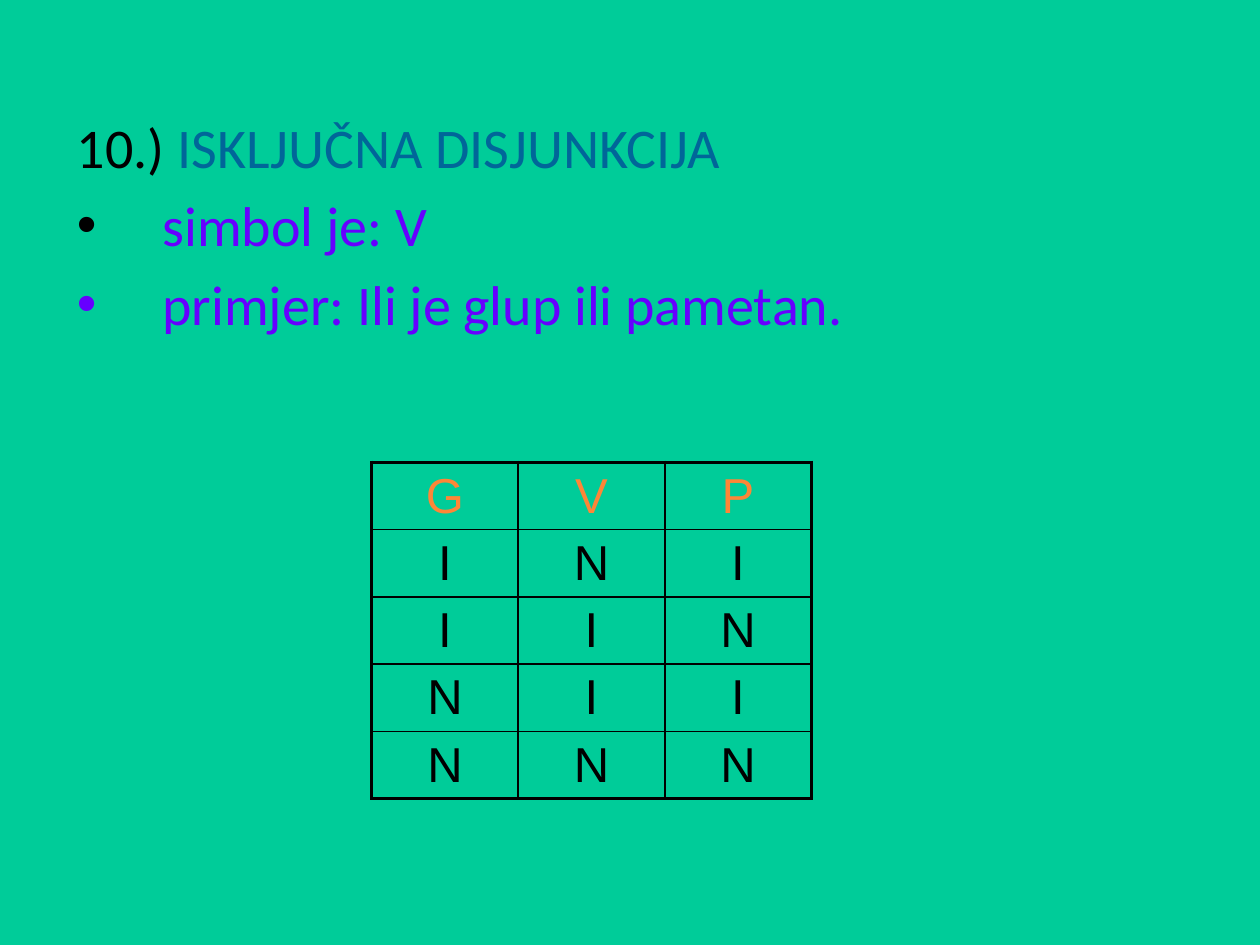
from lxml.etree import SubElement
from pptx import Presentation
from pptx.dml.color import RGBColor
from pptx.enum.text import MSO_ANCHOR, MSO_AUTO_SIZE, PP_ALIGN
from pptx.oxml.ns import qn
from pptx.util import Inches, Pt

GREEN = RGBColor(0x00, 0xCC, 0x99)
BLACK = RGBColor(0x00, 0x00, 0x00)
BLUE = RGBColor(0x00, 0x66, 0x99)
VIOLET = RGBColor(0x66, 0x00, 0xFF)
ORANGE = RGBColor(0xFE, 0x86, 0x37)

HEADING = [("10.) ", BLACK), ("ISKLJUČNA DISJUNKCIJA", BLUE)]
BULLETS = [  # text, bullet colour
    ("simbol je: V", BLACK),
    ("primjer: Ili je glup ili pametan.", VIOLET),
]
TRUTH_TABLE = ["GVP", "INI", "IIN", "NII", "NNN"]

BODY_BOX = [Inches(n) for n in (0.51, 0.84, 9, 4.95)]
TABLE_BOX = [Inches(n) for n in (2.95, 3.67, 3.49, 2.67)]
HANGING_INDENT = Inches(0.68)
CELL_MARGIN = Inches(0.04)
OUTER_LINE, INNER_LINE = Pt(2.25), Pt(1)


def add_text(paragraph, text, *, size, font, color):
    run = paragraph.add_run()
    run.text = text
    run.font.size = Pt(size)
    run.font.name = font
    run.font.color.rgb = color


def set_bullet(paragraph, indent, color=None):
    """Hang the paragraph; without a colour it gets no bullet."""
    props = paragraph._p.get_or_add_pPr()
    props.set("marL", str(indent))
    props.set("indent", str(-indent))
    if color is None:
        SubElement(props, qn("a:buNone"))
        return
    bullet_color = SubElement(props, qn("a:buClr"))
    SubElement(bullet_color, qn("a:srgbClr"), val=str(color))
    SubElement(props, qn("a:buFont"), typeface="Arial")
    SubElement(props, qn("a:buChar"), char="•")


def set_borders(cell, widths):
    props = cell._tc.get_or_add_tcPr()
    for position, (side, width) in enumerate(widths.items()):
        line = props.makeelement(qn(f"a:ln{side}"), {"w": str(width)})
        fill = SubElement(line, qn("a:solidFill"))
        SubElement(fill, qn("a:srgbClr"), val=str(BLACK))
        props.insert(position, line)


def fill_body(body):
    body.left, body.top, body.width, body.height = BODY_BOX
    frame = body.text_frame
    frame.auto_size = MSO_AUTO_SIZE.NONE
    heading = frame.paragraphs[0]
    set_bullet(heading, Inches(0.38))
    for text, color in HEADING:
        add_text(heading, text, size=32, font="Calibri", color=color)
    for text, bullet_color in BULLETS:
        item = frame.add_paragraph()
        set_bullet(item, HANGING_INDENT, bullet_color)
        add_text(item, text, size=32, font="Calibri", color=VIOLET)


def add_truth_table(slide):
    rows, cols = len(TRUTH_TABLE), len(TRUTH_TABLE[0])
    table = slide.shapes.add_table(rows, cols, *TABLE_BOX).table
    table.first_row = table.horz_banding = False
    for r, values in enumerate(TRUTH_TABLE):
        for c, value in enumerate(values):
            cell = table.cell(r, c)
            cell.fill.background()
            cell.vertical_anchor = MSO_ANCHOR.MIDDLE
            cell.margin_top = cell.margin_bottom = CELL_MARGIN
            paragraph = cell.text_frame.paragraphs[0]
            paragraph.alignment = PP_ALIGN.CENTER
            add_text(paragraph, value, size=28, font="Arial",
                     color=BLACK if r else ORANGE)
            on_edge = {"L": c == 0, "R": c == cols - 1,
                       "T": r == 0, "B": r == rows - 1}
            set_borders(cell, {side: OUTER_LINE if edge else INNER_LINE
                               for side, edge in on_edge.items()})


def main():
    deck = Presentation()
    deck.slide_width, deck.slide_height = Inches(10), Inches(7.5)
    slide = deck.slides.add_slide(deck.slide_layouts[1])
    slide.background.fill.solid()
    slide.background.fill.fore_color.rgb = GREEN
    title = slide.shapes.title._element
    title.getparent().remove(title)
    fill_body(slide.placeholders[1])
    add_truth_table(slide)
    deck.save("out.pptx")


if __name__ == "__main__":
    main()
